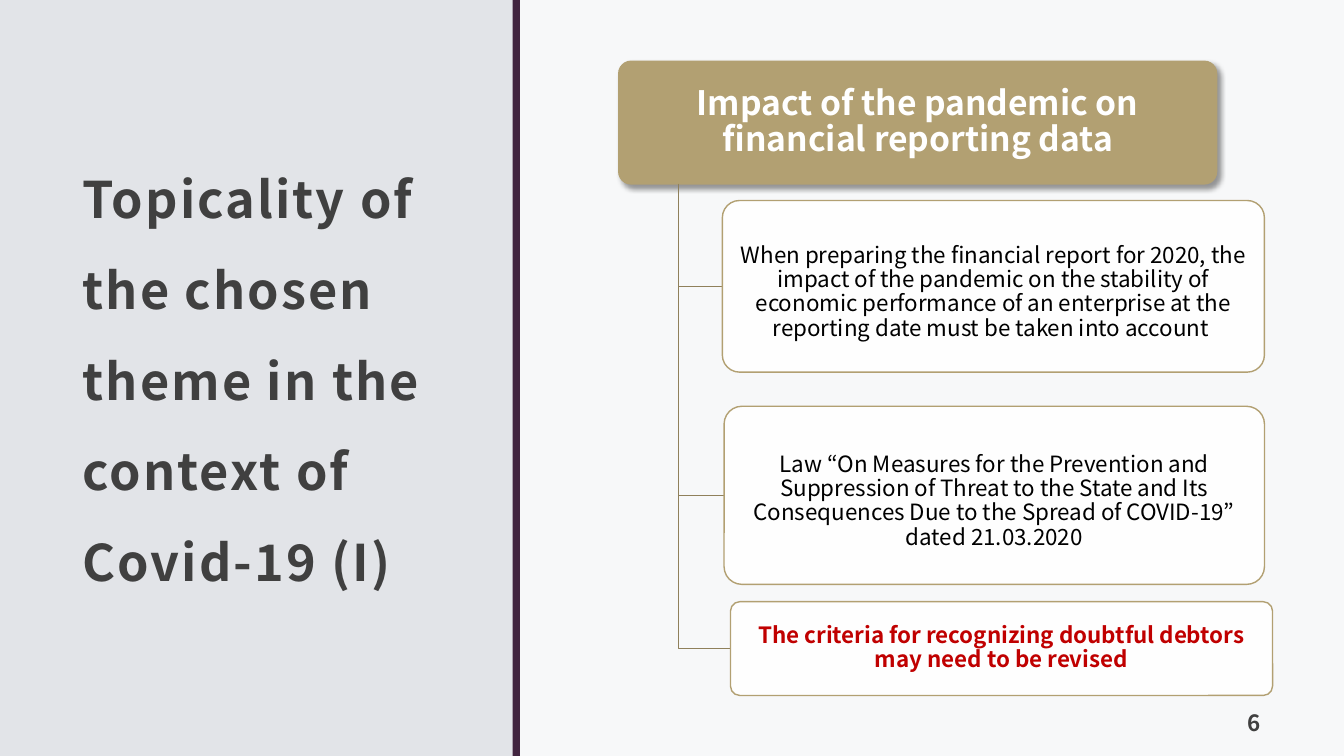
import pptx
import pptx.dml.color
import pptx.enum.shapes
import pptx.enum.text
import pptx.oxml
import pptx.oxml.ns
import pptx.util

Pt = pptx.util.Pt
RGBColor = pptx.dml.color.RGBColor
MSO_SHAPE = pptx.enum.shapes.MSO_SHAPE
PP_ALIGN = pptx.enum.text.PP_ALIGN
MSO_ANCHOR = pptx.enum.text.MSO_ANCHOR
qn = pptx.oxml.ns.qn

FONT = "Noto Sans CJK JP"
GREY = RGBColor(0xE2, 0xE4, 0xE8)
PLUM = RGBColor(0x41, 0x24, 0x3F)
CHARCOAL = RGBColor(0x40, 0x40, 0x40)
GOLD = RGBColor(0xB2, 0xA0, 0x72)
BRONZE = RGBColor(0x8F, 0x80, 0x5B)
RED = RGBColor(0xC0, 0x00, 0x00)
BLACK = RGBColor(0, 0, 0)
WHITE = RGBColor(0xFF, 0xFF, 0xFF)

TRUNK_X = 484.8
HEADER_BOTTOM = 131.4
SHADOW = (
    '<a:effectLst xmlns:a="http://schemas.openxmlformats.org/drawingml/2006/main">'
    '<a:outerShdw blurRad="50800" dist="38100" dir="2700000" algn="tl" rotWithShape="0">'
    '<a:srgbClr val="000000"><a:alpha val="40000"/></a:srgbClr>'
    '</a:outerShdw></a:effectLst>'
)
ITEMS = [
    ((516, 143.2, 387.2, 122.6),
     "When preparing the financial report for 2020, the impact of the pandemic on "
     "the stability of economic performance of an enterprise at the reporting date "
     "must be taken into account ",
     dict(color=BLACK, insets=(6.5, 14, 6.5, 5))),
    ((517.2, 290.2, 386, 127.2),
     "Law “On Measures for the Prevention and Suppression of Threat to the State "
     "and Its Consequences Due to the Spread of COVID-19” dated 21.03.2020",
     dict(color=BLACK, insets=(6.5, 14, 6.5, 5))),
    ((521.8, 429.8, 387.2, 67),
     "The criteria for recognizing doubtful debtors may need to be revised",
     dict(color=RED, bold=True, insets=(4, 4, 4, 4))),
]


def write(s, text, size=16, color=CHARCOAL, bold=False, align=PP_ALIGN.CENTER,
          anchor=MSO_ANCHOR.MIDDLE, spacing=0.9, tracking=0, insets=(6, 4, 6, 4)):
    tf = s.text_frame
    tf.word_wrap = True
    tf.vertical_anchor = anchor
    tf.margin_left, tf.margin_top, tf.margin_right, tf.margin_bottom = map(Pt, insets)
    p = tf.paragraphs[0]
    p.alignment = align
    p.line_spacing = spacing
    r = p.add_run()
    r.text = text
    r.font.name = FONT
    r.font.size = Pt(size)
    r.font.bold = bold
    r.font.color.rgb = color
    if tracking:
        r.font._element.set("spc", str(int(tracking * 100)))


def add_label(slide, box, text, **fmt):
    s = slide.shapes.add_textbox(*map(Pt, box))
    write(s, text, insets=(8.6, 8.6, 8.6, 7.2), tracking=1.5, bold=True, **fmt)


def add_panel(slide, kind, box, fill, opacity=100, line=None):
    s = slide.shapes.add_shape(kind, *map(Pt, box))
    s.shadow.inherit = False
    s.fill.solid()
    s.fill.fore_color.rgb = fill
    if opacity < 100:
        clr = s._element.spPr.find(qn("a:solidFill"))[0]
        clr.append(pptx.oxml.parse_xml(
            '<a:alpha xmlns:a="http://schemas.openxmlformats.org/drawingml/2006/main" '
            f'val="{opacity * 1000}"/>'))
    if line is None:
        s.line.fill.background()
    else:
        s.line.color.rgb = line
        s.line.width = Pt(1)
    return s


def add_card(slide, box, fill, opacity=100):
    s = add_panel(slide, MSO_SHAPE.ROUNDED_RECTANGLE, box, fill, opacity, GOLD)
    s.adjustments[0] = 0.1
    return s


def add_branch(slide, box):
    left, top, _, height = box
    middle = Pt(top + height / 2)
    builder = slide.shapes.build_freeform(Pt(TRUNK_X), Pt(HEADER_BOTTOM))
    builder.add_line_segments([(Pt(TRUNK_X), middle), (Pt(left), middle)], close=False)
    s = builder.convert_to_shape()
    s.shadow.inherit = False
    s.fill.background()
    s.line.color.rgb = BRONZE
    s.line.width = Pt(1)


def add_header(slide, text):
    s = add_card(slide, (442, 43.8, 427, 87.6), GOLD)
    spPr = s._element.spPr
    spPr.replace(spPr.find(qn("a:effectLst")), pptx.oxml.parse_xml(SHADOW))
    write(s, text, size=24, color=WHITE, bold=True)


def main():
    prs = pptx.Presentation()
    prs.slide_width, prs.slide_height = Pt(960), Pt(540)
    slide = prs.slides.add_slide(prs.slide_layouts[6])
    slide.background.fill.solid()
    slide.background.fill.fore_color.rgb = GREY

    add_panel(slide, MSO_SHAPE.RECTANGLE, (371.4, 0, 588.6, 540), WHITE, 75)
    add_panel(slide, MSO_SHAPE.RECTANGLE, (366.2, 0, 5.2, 540), PLUM)
    add_label(slide, (50.4, 55.4, 268.6, 409),
              "Topicality of the chosen theme in the context of Covid-19 (I)",
              size=36, align=PP_ALIGN.LEFT, spacing=1.5)
    add_header(slide, "Impact of the pandemic on financial reporting data")
    for box, text, fmt in ITEMS:
        add_branch(slide, box)
        write(add_card(slide, box, WHITE, 90), text, **fmt)
    add_label(slide, (832.3, 496.8, 77, 36), "6", align=PP_ALIGN.RIGHT,
              anchor=MSO_ANCHOR.BOTTOM, spacing=1.0)
    prs.save("out.pptx")


if __name__ == "__main__":
    main()
